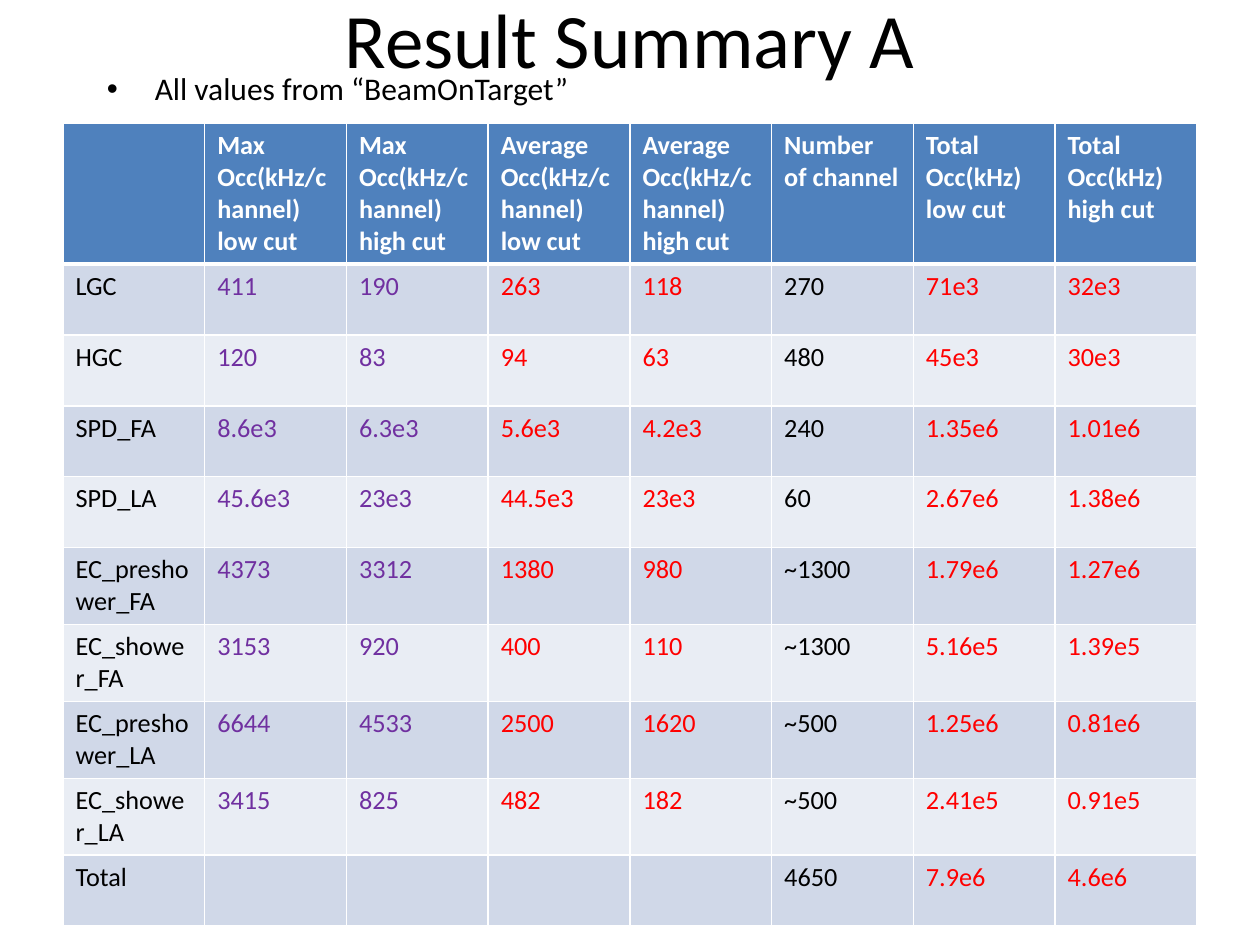
"""Build the occupancy result summary slide."""
import dataclasses
import typing

import lxml.etree
import pptx
import pptx.dml.color
import pptx.enum.text
import pptx.oxml.ns
import pptx.util

Color = pptx.dml.color.RGBColor
BLACK = Color(0, 0, 0)
WHITE = Color(255, 255, 255)
RED = Color(255, 0, 0)
PURPLE = Color(0x70, 0x30, 0xA0)
HEADER_BLUE = Color(0x4F, 0x81, 0xBD)
BANDS = (Color(0xD0, 0xD8, 0xE8), Color(0xE9, 0xED, 0xF4))

SLIDE_WIDTH = pptx.util.Inches(10)
SLIDE_HEIGHT = pptx.util.Inches(7.5)
TABLE_LEFT, TABLE_TOP, TABLE_WIDTH = 0.05, 0.13, 0.9
HEADER_HEIGHT, ROW_HEIGHT = 0.14, 0.075


@dataclasses.dataclass(frozen=True)
class Column:
    heading: str
    color: Color


@dataclasses.dataclass(frozen=True)
class Detector:
    name: str
    values: tuple[str, ...]


COLUMNS = (
    Column("", BLACK),
    Column("Max Occ(kHz/channel)\nlow cut", PURPLE),
    Column("Max Occ(kHz/channel)\nhigh cut", PURPLE),
    Column("Average Occ(kHz/channel)\nlow cut", RED),
    Column("Average Occ(kHz/channel)\nhigh cut", RED),
    Column("Number of channel", BLACK),
    Column("Total\nOcc(kHz)\nlow cut", RED),
    Column("Total\nOcc(kHz)\nhigh cut", RED),
)
DETECTORS = (
    Detector("LGC", ("411", "190", "263", "118", "270", "71e3", "32e3")),
    Detector("HGC", ("120", "83", "94", "63", "480", "45e3", "30e3")),
    Detector("SPD_FA", ("8.6e3", "6.3e3", "5.6e3", "4.2e3", "240", "1.35e6", "1.01e6")),
    Detector("SPD_LA", ("45.6e3", "23e3", "44.5e3", "23e3", "60", "2.67e6", "1.38e6")),
    Detector("EC_preshower_FA", ("4373", "3312", "1380", "980", "~1300", "1.79e6", "1.27e6")),
    Detector("EC_shower_FA", ("3153", "920", "400", "110", "~1300", "5.16e5", "1.39e5")),
    Detector("EC_preshower_LA", ("6644", "4533", "2500", "1620", "~500", "1.25e6", "0.81e6")),
    Detector("EC_shower_LA", ("3415", "825", "482", "182", "~500", "2.41e5", "0.91e5")),
    Detector("Total", ("", "", "", "", "4650", "7.9e6", "4.6e6")),
)


def across(share: float) -> int:
    """Return a share of the slide's width."""
    return round(SLIDE_WIDTH * share)


def down(share: float) -> int:
    """Return a share of the slide's height."""
    return round(SLIDE_HEIGHT * share)


def write_text(frame: typing.Any, text: str, size: float, color: Color, bold: bool = False) -> None:
    """Fill a text frame and format each run."""
    frame.text = text
    font_format = {"name": "Calibri", "size": pptx.util.Pt(size), "bold": bold}
    for paragraph in frame.paragraphs:
        for run in paragraph.runs:
            for attribute, value in font_format.items():
                setattr(run.font, attribute, value)
            run.font.color.rgb = color


def add_borders(cell: typing.Any, widths: dict[str, float]) -> None:
    """Give a cell white borders of the stated widths."""
    properties = cell._tc.get_or_add_tcPr()
    for tag, width in widths.items():
        line = lxml.etree.SubElement(
            properties, pptx.oxml.ns.qn(f"a:{tag}"), w=str(pptx.util.Pt(width)))
        fill = lxml.etree.SubElement(line, pptx.oxml.ns.qn("a:solidFill"))
        lxml.etree.SubElement(fill, pptx.oxml.ns.qn("a:srgbClr"), val=str(WHITE))


def add_title(slide: typing.Any) -> None:
    """Place and format the title placeholder."""
    title = slide.shapes.title
    position = {"left": across(0.05), "top": down(-0.04),
                "width": across(0.9), "height": down(0.16)}
    for attribute, value in position.items():
        setattr(title, attribute, value)
    write_text(title.text_frame, "Result Summary A", 44, BLACK)
    title.text_frame.vertical_anchor = pptx.enum.text.MSO_ANCHOR.MIDDLE
    title.text_frame.paragraphs[0].alignment = pptx.enum.text.PP_ALIGN.CENTER


def add_results(slide: typing.Any) -> None:
    """Draw the table of detector results."""
    height = HEADER_HEIGHT + ROW_HEIGHT * len(DETECTORS)
    table = slide.shapes.add_table(
        len(DETECTORS) + 1, len(COLUMNS), across(TABLE_LEFT), down(TABLE_TOP),
        across(TABLE_WIDTH), down(height)).table
    for table_column in table.columns:
        table_column.width = across(TABLE_WIDTH / len(COLUMNS))
    rows = [tuple(column.heading for column in COLUMNS)]
    rows += [(detector.name, *detector.values) for detector in DETECTORS]
    for row_index, texts in enumerate(rows):
        header = row_index == 0
        table.rows[row_index].height = down(HEADER_HEIGHT if header else ROW_HEIGHT)
        background = HEADER_BLUE if header else BANDS[(row_index - 1) % 2]
        widths = {"lnL": 1, "lnR": 1, "lnT": 3 if row_index == 1 else 1,
                  "lnB": 3 if header else 1}
        for column_index, (column, text) in enumerate(zip(COLUMNS, texts)):
            cell = table.cell(row_index, column_index)
            add_borders(cell, widths)
            cell.fill.solid()
            cell.fill.fore_color.rgb = background
            write_text(cell.text_frame, text, 15, WHITE if header else column.color, header)


def add_note(slide: typing.Any) -> None:
    """Add the bulleted note under the title."""
    frame = slide.shapes.add_textbox(
        across(0.025), down(0.067), across(0.708), down(0.053)).text_frame
    frame.word_wrap = True
    write_text(frame, "All values from “BeamOnTarget”", 18, BLACK)
    paragraph = frame.paragraphs[0]
    paragraph.level = 1
    properties = paragraph._p.get_or_add_pPr()
    indents = {"marL": pptx.util.Inches(0.88), "indent": pptx.util.Inches(-0.38)}
    for attribute, value in indents.items():
        properties.set(attribute, str(value))
    lxml.etree.SubElement(properties, pptx.oxml.ns.qn("a:buFont"), typeface="Arial")
    lxml.etree.SubElement(properties, pptx.oxml.ns.qn("a:buChar"), char="•")


def main() -> None:
    """Create and save the presentation."""
    presentation = pptx.Presentation()
    presentation.slide_width = SLIDE_WIDTH
    presentation.slide_height = SLIDE_HEIGHT
    slide = presentation.slides.add_slide(presentation.slide_layouts.get_by_name("Title Only"))
    add_title(slide)
    add_results(slide)
    add_note(slide)
    presentation.save("out.pptx")


if __name__ == "__main__":
    main()
